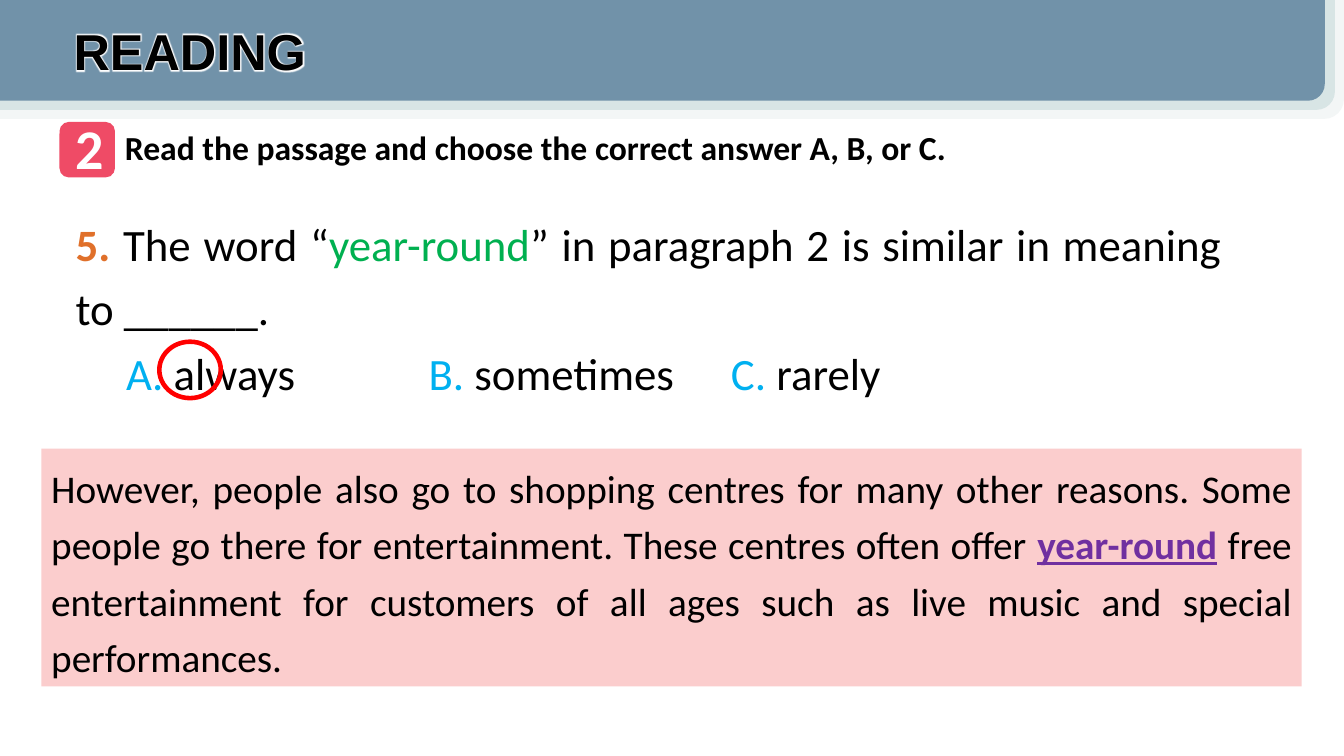
from lxml.etree import SubElement
from pptx import Presentation
from pptx.dml.color import RGBColor
from pptx.enum.shapes import MSO_SHAPE as Preset
from pptx.enum.text import MSO_ANCHOR as Anchor, MSO_AUTO_SIZE as AutoSize, PP_ALIGN as Align
from pptx.oxml import parse_xml
from pptx.oxml.ns import nsdecls, qn
from pptx.util import Inches, Pt

BLACK = RGBColor(0x00, 0x00, 0x00)
WHITE = RGBColor(0xFF, 0xFF, 0xFF)
ORANGE = RGBColor(0xE0, 0x70, 0x2A)
GREEN = RGBColor(0x00, 0xB0, 0x50)
SKY = RGBColor(0x00, 0xB0, 0xF0)
PURPLE = RGBColor(0x70, 0x30, 0xA0)
RED = RGBColor(0xFF, 0x00, 0x00)
PINK = RGBColor(0xFB, 0xCD, 0xCD)
CORAL = RGBColor(0xEF, 0x4B, 0x66)
MIST = RGBColor(0xF3, 0xF6, 0xF6)
PALE_TEAL = RGBColor(0xD8, 0xE5, 0xE5)
STEEL = RGBColor(0x71, 0x92, 0xA9)


class ReadingSlide:
    font = "Calibri"

    def __init__(self, deck):
        self.slide = deck.slides.add_slide(deck.slide_layouts[1])
        self.shapes = self.slide.shapes

    def place(self, shape, box):
        shape.left, shape.top, shape.width, shape.height = map(Inches, box)

    def shape(self, preset, box, fill=None, line=None, parent=None):
        shape = (parent or self.shapes).add_shape(preset, *map(Inches, box))
        shape.shadow.inherit = False
        if fill is None:
            shape.fill.background()
        else:
            shape.fill.solid()
            shape.fill.fore_color.rgb = fill
        if line is None:
            shape.line.fill.background()
        else:
            shape.line.color.rgb = line
            shape.line.width = Pt(3.25)
        return shape

    def add_text(self, shape, paragraphs, size, align=Align.LEFT, spacing=1.0,
                 anchor=Anchor.TOP, font=None, wrap=True):
        frame = shape.text_frame
        frame.word_wrap = wrap
        frame.auto_size = AutoSize.NONE
        frame.vertical_anchor = anchor
        for index, runs in enumerate(paragraphs):
            paragraph = frame.add_paragraph() if index else frame.paragraphs[0]
            paragraph.alignment = align
            paragraph.line_spacing = spacing
            paragraph.space_before = Pt(0)
            for text, color, *marks in runs:
                run = paragraph.add_run()
                run.text = text
                run.font.name = font or self.font
                run.font.size = Pt(size)
                run.font.color.rgb = color
                run.font.bold = "bold" in marks
                run.font.underline = "underline" in marks

    def label(self, box, text, size, color, align=Align.LEFT):
        label = self.shapes.add_textbox(*map(Inches, box))
        self.add_text(label, [[(text, color, "bold")]], size, align)

    def band(self, layers):
        group = self.shapes.add_group_shape()
        for width, height, color in layers:
            layer = self.shape(Preset.ROUND_1_RECTANGLE, (0, 0, width, height), color, parent=group.shapes)
            layer.element.spPr.find(qn("a:xfrm")).set("flipV", "1")

    def title(self, box, text):
        title = self.shapes.title
        self.place(title, box)
        self.add_text(title, [[(text, BLACK, "bold")]], 36, anchor=Anchor.MIDDLE, font="Arial", wrap=False)
        glow = parse_xml(
            f'<a:effectLst {nsdecls("a")}><a:glow rad="38100"><a:srgbClr val="{WHITE}"/></a:glow></a:effectLst>')
        title.element.find(".//" + qn("a:rPr")).find(qn("a:solidFill")).addnext(glow)
        title.element.getparent().append(title.element)

    def question(self, box, paragraphs):
        body = self.slide.placeholders[1]
        self.place(body, box)
        self.add_text(body, paragraphs, 32, Align.JUSTIFY, 1.2)
        for paragraph in body.text_frame.paragraphs:
            properties = paragraph._p.get_or_add_pPr()
            properties.set("marL", "0")
            properties.set("indent", "0")
            SubElement(properties, qn("a:buNone"))


def main():
    deck = Presentation()
    deck.slide_width, deck.slide_height = Inches(13.33), Inches(7.5)
    page = ReadingSlide(deck)

    page.question((0.65, 1.99, 11.57, 1.44), [
        [("5. ", ORANGE, "bold"), ("The word “", BLACK), ("year-round", GREEN),
         ("” in paragraph 2 is similar in meaning to ______.", BLACK)],
        [("\tA. ", SKY), ("always\t\t\t", BLACK), ("B. ", SKY), ("sometimes\t\t", BLACK),
         ("C. ", SKY), ("rarely ", BLACK)],
    ])
    page.band([(13.33, 1.18, MIST), (13.24, 1.09, PALE_TEAL), (13.14, 1, STEEL)])
    page.shape(Preset.OVAL, (1.58, 3.39, 0.61, 0.56), line=RED)

    passage = page.shape(Preset.RECTANGLE, (0.41, 4.45, 12.5, 2.36), PINK)
    page.add_text(passage, [[
        ("However, people also go to shopping centres for many other reasons. Some people go there "
         "for entertainment. These centres often offer ", BLACK),
        ("year-round", PURPLE, "bold", "underline"),
        (" ", BLACK, "bold"),
        ("free entertainment for customers of all ages such as live music and special performances. ", BLACK),
    ]], 28, Align.JUSTIFY, 1.2, Anchor.MIDDLE)

    page.shape(Preset.ROUNDED_RECTANGLE, (0.59, 1.21, 0.55, 0.55), CORAL)
    page.label((0.65, 1.08, 0.43, 0.77), "2", 40, WHITE, Align.CENTER)
    page.label((1.14, 1.21, 8.4, 0.5), "Read the passage and choose the correct answer A, B, or C.", 24, BLACK)
    page.title((0.63, 0.14, 2.71, 0.71), "READING")

    deck.save("out.pptx")


if __name__ == "__main__":
    main()
